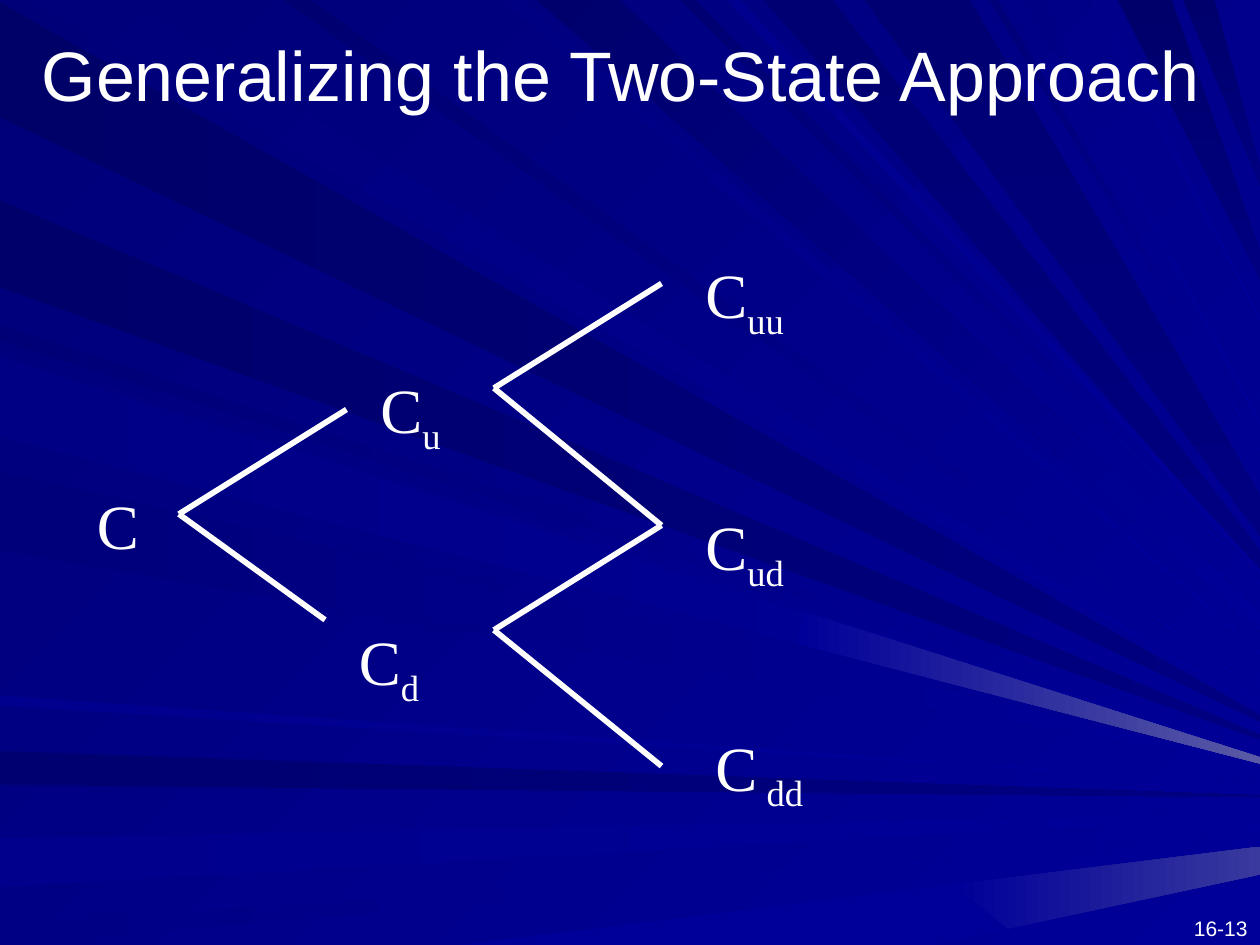
import pptx
import pptx.dml.color
import pptx.enum.shapes
import pptx.enum.text
import pptx.oxml.ns
import pptx.util
import lxml.etree

WHITE = "FFFFFF"
DIM = "000080"
BRIGHT = "000099"
CM_PER_UNIT = 2.54
PAGE_WIDTH, PAGE_HEIGHT = 10, 7.5

# Each ray: edge where it starts, its near and far side there, height at the right edge, colours.
RAYS = [
    ("left", 0.02, 0.93, 5.7, "000069", DIM),
    ("top", 0.26, 1.01, 5.63, "00007B", BRIGHT),
    ("left", 5.96, 6.23, 6.32, "000071", DIM),
    ("left", 6.65, 7.04, 6.47, "00008C", BRIGHT),
    ("left", 7.35, 7.5, 6.62, "000085", BRIGHT),
    ("left", 2.58, 2.7, 5.89, "000076", BRIGHT),
    ("left", 1.59, 2.28, 5.85, "00006B", DIM),
    ("top", 3.98, 4.16, 5.18, "000083", BRIGHT),
    ("top", 4.26, 4.92, 4.93, "00006D", BRIGHT),
    ("top", 5.4, 5.52, 4.63, "000073", BRIGHT),
    ("top", 6.06, 6.61, 4.46, "000073", DIM),
    ("top", 8.87, 9.3, 2.1, "00006B", DIM),
    ("top", 9.39, 9.64, 1.4, "00006D", DIM),
    ("left", 2.78, 3.42, 6, "00007E", BRIGHT),
    ("left", 3.74, 4.37, 6.06, "00007B", BRIGHT),
    ("left", 5.52, 5.6, 6.22, "00008E", BRIGHT),
    ("top", 2.25, 2.47, 5.5, "000070", BRIGHT),
    ("top", 5.77, 5.88, 4.54, "00008E", BRIGHT),
    ("top", 6.86, 7.7, 4.09, "000073", DIM),
    ("top", 7.85, 7.92, 3.57, "000078", BRIGHT),
    ("top", 8.15, 8.24, 3.36, "000085", BRIGHT),
    ("top", 8.65, 8.72, 2.53, "00008A", BRIGHT),
    ("left", 2.83, 3.47, 6.04, "000085", BRIGHT),
]

GLINTS = [
    ([(3.64, 7.5), (7.56, 7.02), (8, 7.37), (7.42, 7.5)], BRIGHT),
    ([(7.56, 7.02), (10, 6.72), (10, 6.94), (8, 7.37)], "39399E"),
    ([(6.37, 4.85), (10, 6.01), (10, 6.06), (6.33, 5.11)], "5A5AA6"),
]

BRANCHES = {
    (1.42, 4.08): [(2.75, 3.25), (2.58, 4.92)],
    (3.92, 3.08): [(5.25, 2.25), (5.25, 4.17)],
    (3.92, 5): [(5.25, 4.17), (5.25, 6.08)],
}

NODES = [
    ("", (0.67, 3.75, 1, 0.7)),
    ("u", (2.92, 2.83, 1, 0.7)),
    ("d", (2.75, 4.83, 1, 0.7)),
    ("uu", (5.5, 1.92, 1.58, 1.6)),
    ("ud", (5.5, 3.92, 1.5, 1.6)),
    (" dd", (5.58, 5.67, 1.58, 0.7)),
]


def length(units):
    return pptx.util.Cm(units * CM_PER_UNIT)


def color(code):
    return pptx.dml.color.RGBColor.from_string(code)


def paint(fill, start, end, angle):
    if start == end:
        fill.solid()
        fill.fore_color.rgb = color(start)
        return
    fill.gradient()
    fill.gradient_angle = (360 - angle) % 360
    for stop, code in zip(fill.gradient_stops, (start, end)):
        stop.color.rgb = color(code)


def add_polygon(shapes, points, start, end, angle):
    corners = [(length(x), length(y)) for x, y in points]
    builder = shapes.build_freeform(*corners[0], scale=1.0)
    builder.add_line_segments(corners[1:], close=True)
    polygon = builder.convert_to_shape()
    polygon.shadow.inherit = False
    polygon.line.fill.background()
    paint(polygon.fill, start, end, angle)


def add_ray(shapes, edge, near, far, height, start, end):
    if edge == "left":
        base = [(0, far), (0, near)]
        spread, angle = 0.05, 0
    else:
        base = [(near, 0), (far, 0)]
        spread, angle = near / 18, 90 if end == DIM else 45
    half = (far - near) * spread / 2
    tip = [(PAGE_WIDTH, height - half), (PAGE_WIDTH, height + half)]
    add_polygon(shapes, base + tip, start, end, angle)


def add_branch(page, start, end):
    ends = [length(value) for value in start + end]
    branch = page.shapes.add_connector(pptx.enum.shapes.MSO_CONNECTOR.STRAIGHT, *ends)
    branch.line.color.rgb = color(WHITE)
    branch.line.width = pptx.util.Pt(3.25)
    lxml.etree.SubElement(branch._element.spPr, pptx.oxml.ns.qn("a:effectLst"))


def add_text(page, text, area, size, font="Arial", align="LEFT", anchor="TOP", top=0.05, subscript=""):
    box = page.shapes.add_textbox(*map(length, area))
    frame = box.text_frame
    frame.word_wrap = True
    frame.margin_top = length(top)
    frame.vertical_anchor = pptx.enum.text.MSO_ANCHOR[anchor]
    para = frame.paragraphs[0]
    para.alignment = pptx.enum.text.PP_ALIGN[align]
    for part, baseline in ((text, 0), (subscript, -25000)):
        if not part:
            continue
        span = para.add_run()
        span.text = part
        span.font.name = font
        span.font.size = pptx.util.Pt(size)
        span.font.color.rgb = color(WHITE)
        if baseline:
            span._r.get_or_add_rPr().set("baseline", str(baseline))


def main():
    """Build the two-state option tree slide and save it."""
    deck = pptx.Presentation()
    deck.slide_width, deck.slide_height = length(PAGE_WIDTH), length(PAGE_HEIGHT)
    page = deck.slides.add_slide(deck.slide_layouts[6])
    paint(page.background.fill, "000078", BRIGHT, 45)
    rays = page.shapes.add_group_shape()
    for ray in RAYS:
        add_ray(rays.shapes, *ray)
    for points, end in GLINTS:
        add_polygon(rays.shapes, points, BRIGHT, end, 0)
    add_text(page, "16-13", (8.92, 7.2, 1.08, 0.3), 12, align="RIGHT", top=0.07)
    add_text(page, "Generalizing the Two-State Approach ", (0, 0.02, 10, 1.12), 40,
             align="CENTER", anchor="MIDDLE")
    for start, ends in BRANCHES.items():
        for end in ends:
            add_branch(page, start, end)
    for state, area in NODES:
        add_text(page, "C", area, 36, font="Times New Roman", top=0.11, subscript=state)
    deck.save("out.pptx")


if __name__ == "__main__":
    main()
